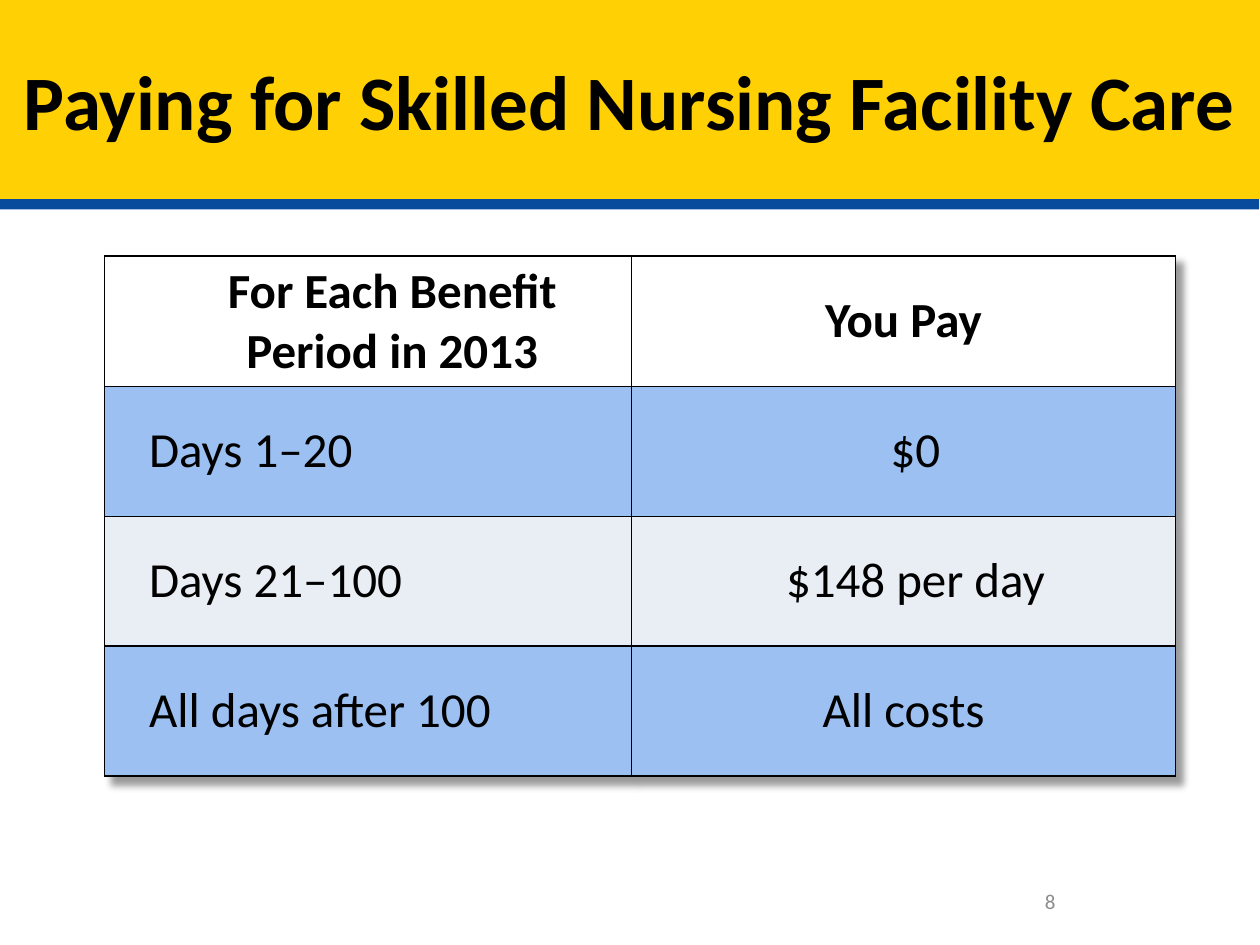
from dataclasses import dataclass

from lxml.etree import SubElement
from pptx import Presentation
from pptx.dml.color import RGBColor
from pptx.enum.shapes import MSO_SHAPE
from pptx.enum.text import MSO_ANCHOR, PP_ALIGN
from pptx.oxml.ns import qn
from pptx.util import Cm, Pt

COLORS = {
    "gold": "FFD004",
    "navy": "084A9C",
    "black": "000000",
    "white": "FFFFFF",
    "sky": "9BC0F1",
    "pale": "E9EDF4",
    "gray": "8C8C8C",
}
TITLE = {"size": Pt(44), "bold": True}
HEAD = {"size": Pt(28), "bold": True}
BODY = {"size": Pt(28), "bold": False}
NOTE = {"size": Pt(12), "bold": False}
LEFT, MID = PP_ALIGN.LEFT, PP_ALIGN.CENTER


@dataclass
class Entry:
    text: str
    align: PP_ALIGN = MID
    margin: float = 0
    indent: float = 0


@dataclass
class Row:
    cells: tuple[Entry, Entry]
    fill: str
    style: dict


ROWS = (
    Row((Entry("For Each Benefit Period in 2013", margin=0.97), Entry("You Pay")),
        "white", HEAD),
    Row((Entry("Days 1–20", LEFT, 0.64), Entry("$0", margin=0.48)), "sky", BODY),
    Row((Entry("Days 21–100", LEFT, 0.64), Entry("$148 per day", margin=0.48)),
        "pale", BODY),
    Row((Entry("All days after 100", LEFT, 0.64),
         Entry("All costs", margin=0.48, indent=-0.48)), "sky", BODY),
)
WIDTHS = (10.62, 10.97)
HEIGHT = 2.62


def rgb(name: str) -> RGBColor:
    return RGBColor.from_string(COLORS[name])


def write(frame, entry: Entry, style: dict, color: str = "black") -> None:
    para = frame.paragraphs[0]
    para.alignment = entry.align
    props = para._p.get_or_add_pPr()
    for key, value in {"marL": entry.margin, "indent": entry.indent}.items():
        props.set(key, str(Cm(value)))
    run = para.add_run()
    run.text = entry.text
    for key, value in {"name": "Calibri", **style}.items():
        setattr(run.font, key, value)
    run.font.color.rgb = rgb(color)


def shade(effects, color: str, alpha: int, blur: float, dist: float, angle: int) -> None:
    """Add an outer shadow; alpha in percent, angle in degrees."""
    outer = SubElement(effects, qn("a:outerShdw"))
    values = {"blurRad": Pt(blur), "dist": Pt(dist), "dir": angle * 60000,
              "algn": "tl", "rotWithShape": 0}
    for key, value in values.items():
        outer.set(key, str(value))
    tint = SubElement(outer, qn("a:srgbClr"), val=COLORS[color])
    SubElement(tint, qn("a:alpha"), val=str(alpha * 1000))


def border(cell) -> None:
    """Put the side lines ahead of the fill, as the schema asks."""
    props = cell._tc.get_or_add_tcPr()
    for spot, side in enumerate(("lnL", "lnR", "lnT", "lnB")):
        line = SubElement(props, qn(f"a:{side}"), w=str(Pt(1)))
        fill = SubElement(line, qn("a:solidFill"))
        SubElement(fill, qn("a:srgbClr"), val=COLORS["black"])
        props.insert(spot, line)


def banner(slide) -> None:
    band = slide.shapes.add_shape(MSO_SHAPE.RECTANGLE, 0, 0, Cm(25.4), Cm(4.01))
    band.fill.solid()
    band.fill.fore_color.rgb = rgb("gold")
    band.line.fill.background()
    band.shadow.inherit = False
    shade(band._element.spPr.find(qn("a:effectLst")), "navy", 100, 0, 6, 94)
    frame = band.text_frame
    frame.word_wrap = True
    frame.vertical_anchor = MSO_ANCHOR.MIDDLE
    write(frame, Entry("Paying for Skilled Nursing Facility Care"), TITLE)


def costs(slide) -> None:
    table = slide.shapes.add_table(
        len(ROWS), len(WIDTHS), Cm(2.11), Cm(5.16),
        Cm(sum(WIDTHS)), Cm(HEIGHT * len(ROWS))).table
    props = table._tbl.tblPr
    effects = SubElement(props, qn("a:effectLst"))
    props.insert(0, effects)
    shade(effects, "black", 40, 4, 6, 45)
    for col, width in zip(table.columns, WIDTHS):
        col.width = Cm(width)
    for line, row in zip(table.rows, ROWS):
        line.height = Cm(HEIGHT)
        for cell, entry in zip(line.cells, row.cells):
            cell.fill.solid()
            cell.fill.fore_color.rgb = rgb(row.fill)
            cell.vertical_anchor = MSO_ANCHOR.MIDDLE
            border(cell)
            write(cell.text_frame, entry, row.style)


def number(slide) -> None:
    box = slide.shapes.add_textbox(Cm(18.21), Cm(17.65), Cm(5.92), Cm(1.02))
    frame = box.text_frame
    frame.word_wrap = True
    frame.vertical_anchor = MSO_ANCHOR.MIDDLE
    write(frame, Entry("8"), NOTE, "gray")


def main() -> None:
    deck = Presentation()
    deck.slide_width, deck.slide_height = Cm(25.4), Cm(19.05)
    slide = deck.slides.add_slide(deck.slide_layouts[6])
    banner(slide)
    number(slide)
    costs(slide)
    deck.save("out.pptx")


if __name__ == "__main__":
    main()
